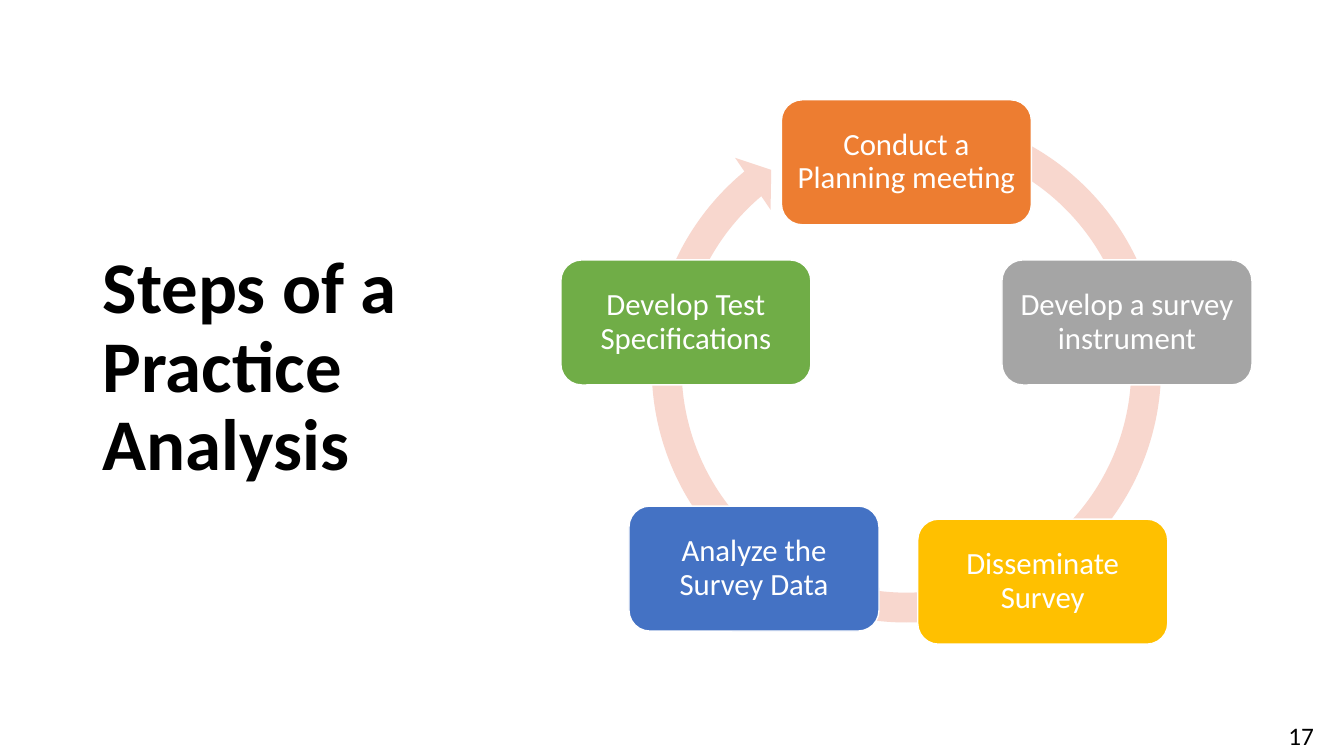
import math

import pptx
import pptx.util
import pptx.dml.color
import pptx.enum.shapes
import pptx.enum.text

Inches, Pt = pptx.util.Inches, pptx.util.Pt
RGB = pptx.dml.color.RGBColor
SHAPE = pptx.enum.shapes.MSO_SHAPE
ALIGN = pptx.enum.text.PP_ALIGN

BLACK, WHITE = RGB(0, 0, 0), RGB(255, 255, 255)
PINK = RGB(0xF8, 0xD7, 0xCE)
ORANGE, GRAY = RGB(0xED, 0x7D, 0x31), RGB(0xA5, 0xA5, 0xA5)
GOLD, BLUE = RGB(0xFF, 0xC0, 0x00), RGB(0x44, 0x72, 0xC4)
GREEN = RGB(0x70, 0xAD, 0x47)
FONT = "Calibri"

# Content: steps clockwise from the top, with an offset from the even ring
TITLE = "Steps of a Practice Analysis"
PAGE = "17"
STEPS = [
    ("Conduct a Planning meeting", ORANGE, (0, 0)),
    ("Develop a survey instrument", GRAY, (0, 0)),
    ("Disseminate Survey", GOLD, (0, 0)),
    ("Analyze the Survey Data", BLUE, (-0.16, -0.13)),
    ("Develop Test Specifications", GREEN, (0, 0)),
]

# Cycle geometry in inches
CENTER_X, CENTER_Y, RADIUS = 8.99, 3.91, 2.3
STEP_W, STEP_H = 2.48, 1.24
ARROW_TOP, ARROW_SIZE = 0.96, 5.38
ARROW_ADJ = (0.055, 3.307, 138.104, 173.65, 0.058)


def place(shape, left, top, width, height):
    shape.left, shape.top = Inches(left), Inches(top)
    shape.width, shape.height = Inches(width), Inches(height)


def write(shape, text, size, color, align, bold=False, spacing=None):
    tf = shape.text_frame
    tf.word_wrap = True
    tf.auto_size = pptx.enum.text.MSO_AUTO_SIZE.NONE
    tf.vertical_anchor = pptx.enum.text.MSO_ANCHOR.MIDDLE
    p = tf.paragraphs[0]
    p.alignment, p.line_spacing = align, spacing
    r = p.add_run()
    r.text = text
    r.font.name, r.font.size, r.font.bold = FONT, Pt(size), bold
    r.font.color.rgb = color
    return tf


def add_filled(s, kind, box, fill):
    sp = s.shapes.add_shape(kind, *map(Inches, box))
    sp.shadow.inherit = False
    sp.fill.solid()
    sp.fill.fore_color.rgb = fill
    return sp


def main():
    prs = pptx.Presentation()
    prs.slide_width, prs.slide_height = Inches(13.33), Inches(7.5)
    s = prs.slides.add_slide(prs.slide_layouts.get_by_name("Title Only"))

    # Title
    title = s.shapes.title
    place(title, 0.92, 0.61, 3.69, 6.09)
    write(title, TITLE, 52, BLACK, ALIGN.LEFT, True, 0.9)

    # Ring arrow behind the steps
    box = (CENTER_X - ARROW_SIZE / 2, ARROW_TOP, ARROW_SIZE, ARROW_SIZE)
    arrow = add_filled(s, SHAPE.CIRCULAR_ARROW, box, PINK)
    arrow.line.fill.background()
    for i, value in enumerate(ARROW_ADJ):
        arrow.adjustments[i] = value

    # Steps spaced evenly around the ring
    for i, (text, color, (dx, dy)) in enumerate(STEPS):
        angle = 2 * math.pi * i / len(STEPS)
        x = CENTER_X + RADIUS * math.sin(angle) + dx
        y = CENTER_Y - RADIUS * math.cos(angle) + dy
        box = (x - STEP_W / 2, y - STEP_H / 2, STEP_W, STEP_H)
        sp = add_filled(s, SHAPE.ROUNDED_RECTANGLE, box, color)
        sp.line.color.rgb = WHITE
        sp.line.width = Pt(1)
        tf = write(sp, text, 22, WHITE, ALIGN.CENTER, spacing=0.9)
        tf.margin_left = tf.margin_right = Inches(0.09)
        tf.margin_top = tf.margin_bottom = Inches(0.09)

    # Page number
    number = s.shapes.add_textbox(*map(Inches, (10.13, 7.1, 3, 0.4)))
    write(number, PAGE, 18, BLACK, ALIGN.RIGHT)

    prs.save("out.pptx")


if __name__ == "__main__":
    main()
